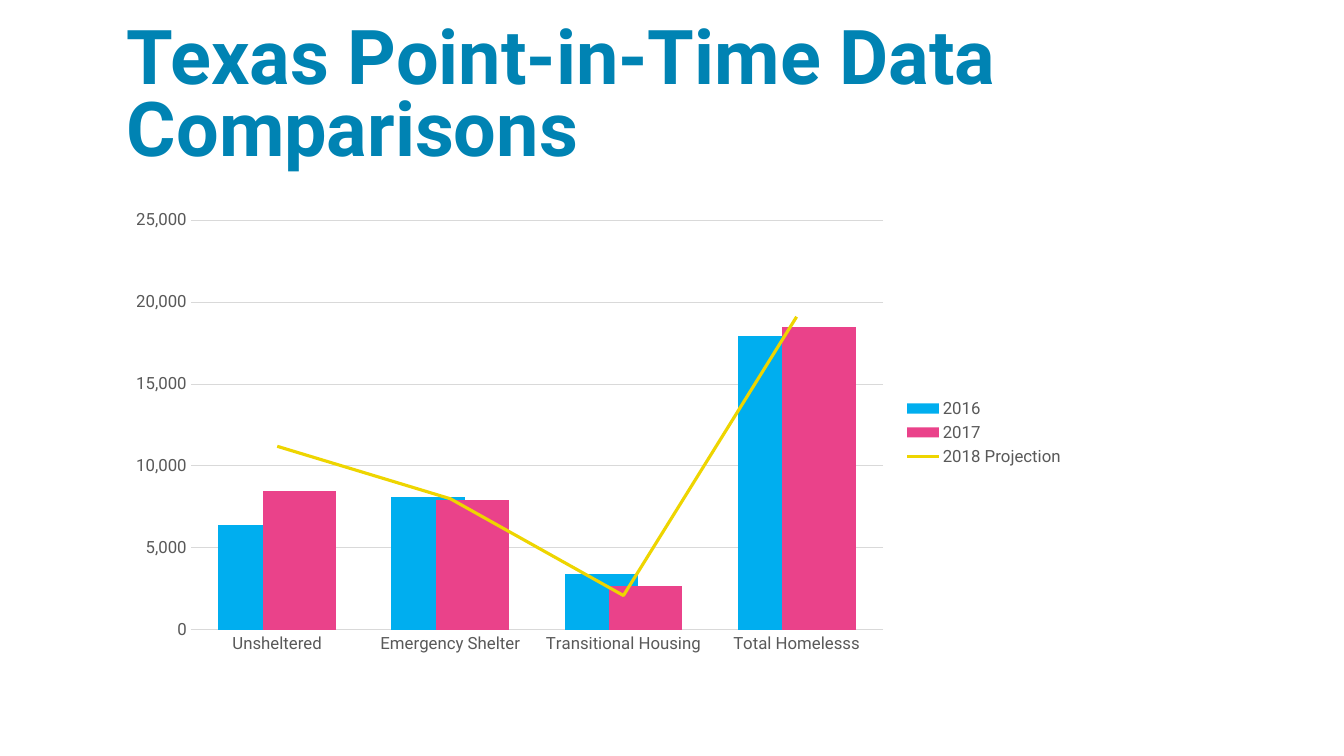
from dataclasses import dataclass

from lxml.etree import SubElement
from pptx import Presentation
from pptx.chart.data import CategoryChartData
from pptx.dml.color import RGBColor
from pptx.enum.chart import XL_CHART_TYPE, XL_LEGEND_POSITION, XL_MARKER_STYLE, XL_TICK_MARK
from pptx.enum.text import MSO_ANCHOR
from pptx.oxml.ns import qn
from pptx.util import Inches, Pt


@dataclass(frozen=True)
class Theme:
    font: str = "Roboto"
    heading: str = "0083B3"
    label: str = "595959"
    rule: str = "D9D9D9"
    series: tuple = ("00AEEF", "EA428A", "EED500")
    heading_size: float = 54
    label_size: float = 12
    rule_width: float = 0.75
    projection_width: float = 2.25


THEME = Theme()
SLIDE_WIDTH, SLIDE_HEIGHT = Inches(13.33), Inches(7.5)
LEFT, WIDTH = 0.087, 0.7127
TITLE_TOP, TITLE_HEIGHT = 0.0773, 0.156
CHART_TOP, CHART_HEIGHT = 0.2667, 0.6107
PLOT_SHARES = {"x": 0.077, "y": 0.04, "w": 0.723, "h": 0.888}

CATEGORIES = ("Unsheltered", "Emergency Shelter", "Transitional Housing", "Total Homelesss")
COUNTS = {
    "2016": (6400, 8100, 3400, 17900),
    "2017": (8500, 7900, 2700, 18500),
    "2018 Projection": (11200, 8000, 2100, 19100),
}


def place(top, height):
    return (
        int(SLIDE_WIDTH * LEFT),
        int(SLIDE_HEIGHT * top),
        int(SLIDE_WIDTH * WIDTH),
        int(SLIDE_HEIGHT * height),
    )


def style_font(font, size, color, bold=False):
    font.name = THEME.font
    font.size = Pt(size)
    font.bold = bold
    font.color.rgb = RGBColor.from_string(color)


def style_line(line, color, width):
    line.color.rgb = RGBColor.from_string(color)
    line.width = Pt(width)


def add_title(slide, wording):
    frame = slide.shapes.add_textbox(*place(TITLE_TOP, TITLE_HEIGHT)).text_frame
    frame.word_wrap = True
    frame.vertical_anchor = MSO_ANCHOR.BOTTOM
    paragraph = frame.paragraphs[0]
    paragraph.line_spacing = 0.8
    run = paragraph.add_run()
    run.text = wording
    style_font(run.font, THEME.heading_size, THEME.heading, bold=True)


def move_last_series_to_line(chart):
    columns = chart.plots[0]._element
    projection = columns.findall(qn("c:ser"))[-1]
    for column_setting in projection.findall(qn("c:invertIfNegative")):
        projection.remove(column_setting)
    line_plot = columns.makeelement(qn("c:lineChart"))
    columns.addnext(line_plot)
    SubElement(line_plot, qn("c:grouping")).set("val", "standard")
    SubElement(line_plot, qn("c:varyColors")).set("val", "0")
    line_plot.append(projection)
    SubElement(line_plot, qn("c:marker")).set("val", "1")
    for axis in columns.findall(qn("c:axId")):
        SubElement(line_plot, qn("c:axId")).set("val", axis.get("val"))


def fix_plot_area(chart):
    plot_area = chart.plots[0]._element.getparent()
    layout = plot_area.find(qn("c:layout"))
    if layout is None:
        layout = plot_area.makeelement(qn("c:layout"))
        plot_area.insert(0, layout)
    manual = SubElement(layout, qn("c:manualLayout"))
    SubElement(manual, qn("c:layoutTarget")).set("val", "inner")
    for side in ("x", "y"):
        SubElement(manual, qn(f"c:{side}Mode")).set("val", "edge")
    for side, share in PLOT_SHARES.items():
        SubElement(manual, qn(f"c:{side}")).set("val", str(share))


def style_axes(chart):
    for axis in (chart.category_axis, chart.value_axis):
        axis.major_tick_mark = axis.minor_tick_mark = XL_TICK_MARK.NONE
        style_font(axis.tick_labels.font, THEME.label_size, THEME.label)
    style_line(chart.category_axis.format.line, THEME.rule, THEME.rule_width)
    counts = chart.value_axis
    counts.minimum_scale, counts.maximum_scale, counts.major_unit = 0, 25000, 5000
    counts.format.line.fill.background()
    counts.has_major_gridlines = True
    style_line(counts.major_gridlines.format.line, THEME.rule, THEME.rule_width)
    counts.tick_labels.number_format = "#,##0"
    counts.tick_labels.number_format_is_linked = False


def style_series(chart):
    columns, line_plot = chart.plots
    columns.gap_width = 75
    columns.overlap = 40
    columns.vary_by_categories = False
    for year, color in zip(columns.series, THEME.series):
        year.format.fill.solid()
        year.format.fill.fore_color.rgb = RGBColor.from_string(color)
    projection = line_plot.series[0]
    projection.smooth = False
    projection.marker.style = XL_MARKER_STYLE.NONE
    style_line(projection.format.line, THEME.series[-1], THEME.projection_width)


def add_legend(chart):
    chart.has_legend = True
    chart.legend.position = XL_LEGEND_POSITION.RIGHT
    chart.legend.include_in_layout = False
    style_font(chart.legend.font, THEME.label_size, THEME.label)


def add_comparison_chart(slide):
    table = CategoryChartData(number_format="#,##0")
    table.categories = CATEGORIES
    for year, counts in COUNTS.items():
        table.add_series(year, counts)
    chart = slide.shapes.add_chart(
        XL_CHART_TYPE.COLUMN_CLUSTERED, *place(CHART_TOP, CHART_HEIGHT), table
    ).chart
    chart.has_title = False
    style_font(chart.font, THEME.label_size, THEME.label)
    move_last_series_to_line(chart)
    fix_plot_area(chart)
    style_axes(chart)
    style_series(chart)
    add_legend(chart)


def main():
    deck = Presentation()
    deck.slide_width, deck.slide_height = SLIDE_WIDTH, SLIDE_HEIGHT
    slide = deck.slides.add_slide(deck.slide_layouts[6])
    add_title(slide, "Texas Point-in-Time Data Comparisons")
    add_comparison_chart(slide)
    deck.save("out.pptx")


if __name__ == "__main__":
    main()
